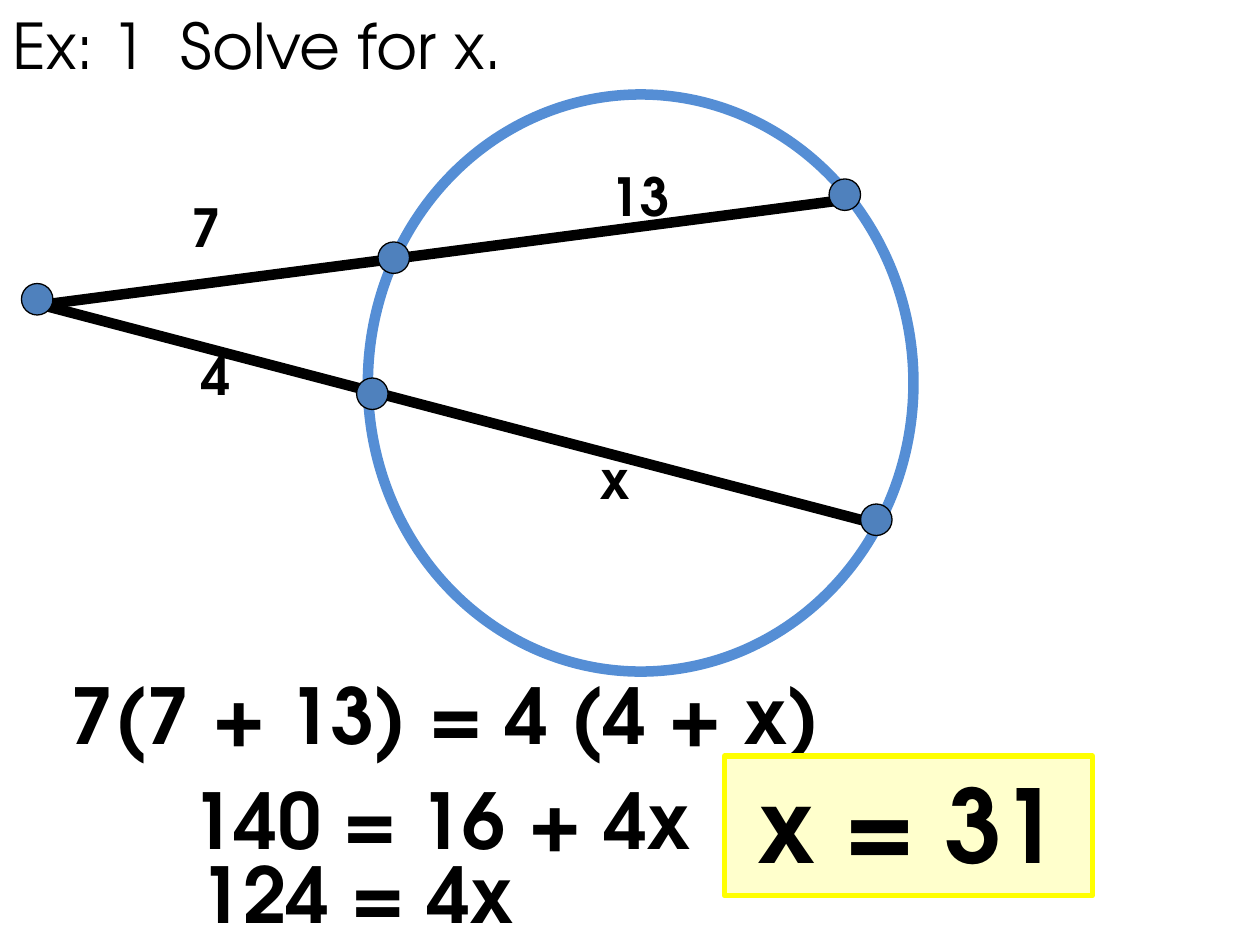
"""Build a worked example: solving for x with two secants of a circle."""
from lxml import etree
from pptx import Presentation
from pptx.dml.color import RGBColor
from pptx.enum.shapes import MSO_CONNECTOR, MSO_SHAPE
from pptx.enum.text import MSO_ANCHOR, PP_ALIGN
from pptx.oxml.ns import qn
from pptx.util import Inches, Pt

OVAL, RECTANGLE = MSO_SHAPE.OVAL, MSO_SHAPE.RECTANGLE
STRAIGHT = MSO_CONNECTOR.STRAIGHT
LEFT, CENTER = PP_ALIGN.LEFT, PP_ALIGN.CENTER
TOP, BOTTOM = MSO_ANCHOR.TOP, MSO_ANCHOR.BOTTOM

BLACK = RGBColor(0x00, 0x00, 0x00)
CIRCLE_BLUE = RGBColor(0x55, 0x8E, 0xD5)
DOT_BLUE = RGBColor(0x4F, 0x81, 0xBD)
CREAM = RGBColor(0xFF, 0xFF, 0xCC)
YELLOW = RGBColor(0xFF, 0xFF, 0x00)
FONT = "TeX Gyre Adventor"

VERTEX = (0.33, 2.42)
UPPER_END, LOWER_END = (6.75, 1.58), (7, 4.17)
CIRCLE = (2.92, 0.75, 4.33, 4.58)
DOT_SIZE = 0.25
DOTS = [(6.58, 1.42), (0.17, 2.25), (3, 1.92), (2.83, 3), (6.83, 4)]

TITLE = ("Ex: 1  Solve for x.", (0, 0, 8.17, 0.7))
LENGTHS = [("7", 1.42, 1.5), ("13", 4.75, 1.25), ("4", 1.5, 2.67), ("x", 4.67, 3.5)]
STEPS = [
    ("7(7 + 13) = 4 (4 + x)", (0, 5.25, 7.08, 0.84)),
    ("140 = 16 + 4x", (1.42, 6.08, 4.17, 0.83)),
    ("124 = 4x", (1.25, 6.67, 3.17, 0.83)),
]
ANSWER = ("x = 31", (5.75, 6, 2.92, 1.11))

TITLE_FONT = {"size": Pt(36), "bold": False}
LENGTH_FONT = {"size": Pt(30), "bold": True}
STEP_FONT = {"size": Pt(44), "bold": True}
ANSWER_FONT = {"size": Pt(58), "bold": True}


def inches(values):
    return [Inches(value) for value in values]


def add_secant(page, end):
    secant = page.shapes.add_connector(STRAIGHT, *inches(VERTEX + end))
    secant.line.color.rgb = BLACK
    secant.line.width = Pt(6)
    etree.SubElement(secant._element.spPr, qn("a:effectLst"))


def add_outline(page, kind, place, fill, color, width):
    shape = page.shapes.add_shape(kind, *inches(place))
    shape.shadow.inherit = False
    if fill is None:
        shape.fill.background()
    else:
        shape.fill.solid()
        shape.fill.fore_color.rgb = fill
    shape.line.color.rgb = color
    shape.line.width = Pt(width)
    return shape


def write(shape, text, font, align=LEFT, anchor=TOP):
    frame = shape.text_frame
    frame.word_wrap = True
    frame.vertical_anchor = anchor
    para = frame.paragraphs[0]
    para.alignment = align
    span = para.add_run()
    span.text = text
    for name, value in {"name": FONT, **font}.items():
        setattr(span.font, name, value)
    span.font.color.rgb = BLACK


def add_text(page, text, place, font, align=LEFT, anchor=TOP):
    box = page.shapes.add_textbox(*inches(place))
    write(box, text, font, align, anchor)


def main():
    deck = Presentation()
    deck.slide_width, deck.slide_height = Inches(10), Inches(7.5)
    page = deck.slides.add_slide(deck.slide_layouts[6])

    add_secant(page, UPPER_END)
    add_outline(page, OVAL, CIRCLE, None, CIRCLE_BLUE, 6)
    add_secant(page, LOWER_END)
    for dot in DOTS:
        add_outline(page, OVAL, dot + (DOT_SIZE, DOT_SIZE), DOT_BLUE, BLACK, 0.75)

    for text, left, top in LENGTHS:
        add_text(page, text, (left, top, 1, 0.6), LENGTH_FONT)
    add_text(page, *TITLE, TITLE_FONT, anchor=BOTTOM)
    for text, place in STEPS:
        add_text(page, text, place, STEP_FONT, CENTER)

    text, place = ANSWER
    answer = add_outline(page, RECTANGLE, place, CREAM, YELLOW, 3)
    write(answer, text, ANSWER_FONT, CENTER)
    deck.save("out.pptx")


if __name__ == "__main__":
    main()
